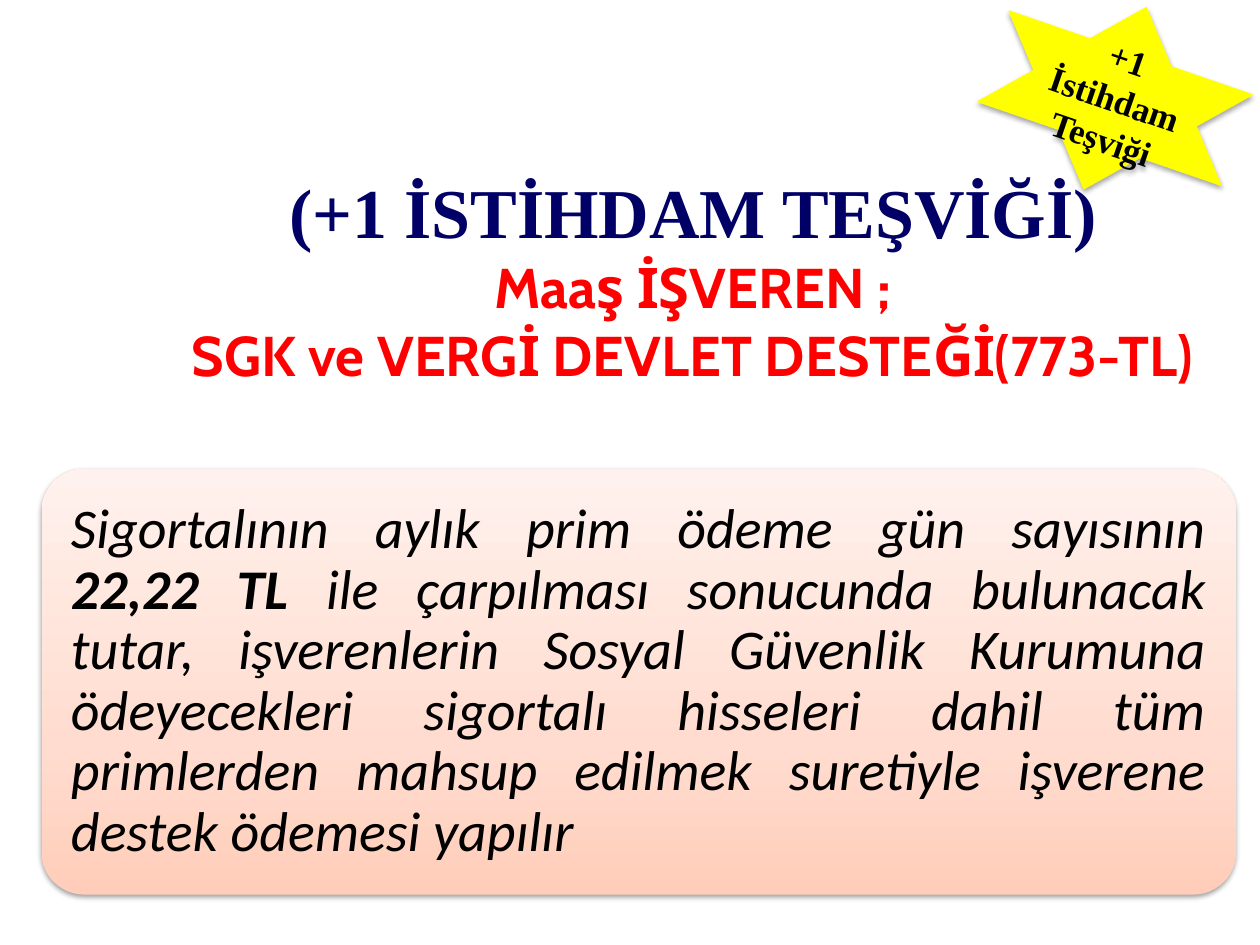
"""Build the slide on the +1 employment incentive."""
from copy import deepcopy
from dataclasses import dataclass

from pptx import Presentation
from pptx.dml.color import RGBColor
from pptx.enum.shapes import MSO_SHAPE
from pptx.enum.text import MSO_ANCHOR, MSO_AUTO_SIZE, PP_ALIGN
from pptx.oxml import parse_xml
from pptx.oxml.ns import nsdecls, qn
from pptx.shapes.autoshape import Shape
from pptx.slide import Slide
from pptx.text.text import TextFrame, _Paragraph as Paragraph
from pptx.util import Pt


@dataclass
class Frame:
    left: float
    top: float
    width: float
    height: float

    def lengths(self) -> list[Pt]:
        return [Pt(value) for value in (self.left, self.top, self.width, self.height)]


@dataclass
class Style:
    name: str
    size: float
    color: str
    bold: bool = False
    italic: bool = False


HEADING = Style("Times New Roman", 40, "000066", bold=True)
SUBHEADING = Style("Cabin", 32, "FF0000", bold=True)
BODY = Style("Calibri", 32, "000000", italic=True)
BODY_BOLD = Style("Calibri", 32, "000000", bold=True, italic=True)
BADGE = Style("Times New Roman", 20, "000000", bold=True)

PANEL_FRAME = Frame(23.76, 267.84, 682.56, 243.36)
BODY_FRAME = Frame(30.96, 275.04, 668.16, 228.96)
TITLE_FRAME = Frame(85.68, 92.88, 620.64, 172.08)
BADGE_FRAME = Frame(563.76, 1.44, 146.88, 109.44)

HEADING_LINES = [
    ("(+1 İSTİHDAM TEŞVİĞİ)", HEADING),
    ("Maaş İŞVEREN ;", SUBHEADING),
    ("SGK ve VERGİ DEVLET DESTEĞİ(773-TL)", SUBHEADING),
]
PANEL_STOPS = [(0, "FFCDBA"), (0.35, "FFDCCF"), (1, "FFF1ED")]


def color(value: str) -> RGBColor:
    """Turn a hex string into a colour."""
    return RGBColor.from_string(value)


def set_values(target: object, values: dict) -> None:
    """Set each named attribute on the target."""
    for name, value in values.items():
        setattr(target, name, value)


def add_span(para: Paragraph, text: str, style: Style) -> None:
    """Append styled text to a paragraph."""
    span = para.add_run()
    span.text = text
    set_values(span.font, {
        "name": style.name, "size": Pt(style.size),
        "bold": style.bold, "italic": style.italic,
    })
    span.font.color.rgb = color(style.color)


def set_frame(text_frame: TextFrame, anchor: MSO_ANCHOR, inset_x: float, inset_y: float) -> None:
    """Set wrapping, anchor and insets of a text frame."""
    set_values(text_frame, {
        "word_wrap": True, "auto_size": MSO_AUTO_SIZE.NONE, "vertical_anchor": anchor,
        "margin_left": Pt(inset_x), "margin_right": Pt(inset_x),
        "margin_top": Pt(inset_y), "margin_bottom": Pt(inset_y),
    })


def place(box: Shape, frame: Frame) -> None:
    """Move a placeholder to its frame."""
    set_values(box, dict(zip(("left", "top", "width", "height"), frame.lengths())))


def add_shadow(box: Shape, blur: float, distance: float, opacity: int) -> None:
    """Give a shape a soft black shadow falling downwards."""
    box.shadow.inherit = False
    effects = box.element.spPr.find(qn("a:effectLst"))
    effects.append(parse_xml(
        f'<a:outerShdw {nsdecls("a")} blurRad="{Pt(blur)}" dist="{Pt(distance)}" '
        f'dir="5400000" rotWithShape="0"><a:srgbClr val="000000">'
        f'<a:alpha val="{opacity * 1000}"/></a:srgbClr></a:outerShdw>'
    ))


def add_panel(slide: Slide) -> Shape:
    """Draw the rounded gradient panel."""
    panel = slide.shapes.add_shape(MSO_SHAPE.ROUNDED_RECTANGLE, *PANEL_FRAME.lengths())
    panel.adjustments[0] = 0.1
    panel.line.fill.background()
    panel.fill.gradient()
    panel.fill.gradient_angle = 90
    first_stop = panel.element.spPr.find(".//" + qn("a:gs"))
    first_stop.addnext(deepcopy(first_stop))
    for stop, (position, value) in zip(panel.fill.gradient_stops, PANEL_STOPS):
        stop.position = position
        stop.color.rgb = color(value)
    add_shadow(panel, 3.1, 1.6, 38)
    return panel


def fill_title(title: Shape) -> None:
    """Write the three heading lines."""
    place(title, TITLE_FRAME)
    set_frame(title.text_frame, MSO_ANCHOR.TOP, 7.2, 3.6)
    for index, (text, style) in enumerate(HEADING_LINES):
        para = title.text_frame.add_paragraph() if index else title.text_frame.paragraphs[0]
        para.alignment = PP_ALIGN.CENTER
        add_span(para, text, style)


def fill_body(body: Shape) -> None:
    """Write the justified explanation."""
    place(body, BODY_FRAME)
    set_frame(body.text_frame, MSO_ANCHOR.MIDDLE, 9.6, 9.6)
    para = body.text_frame.paragraphs[0]
    properties = para._p.get_or_add_pPr()
    properties.set("marL", "0")
    properties.set("indent", "0")
    properties.append(parse_xml(f'<a:buNone {nsdecls("a")}/>'))
    set_values(para, {
        "alignment": PP_ALIGN.JUSTIFY, "line_spacing": 0.9, "space_before": Pt(0),
    })
    add_span(para, "Sigortalının aylık prim ödeme gün sayısının", BODY)
    para.add_line_break()
    add_span(para, "22,22 TL", BODY_BOLD)
    add_span(
        para,
        " ile çarpılması sonucunda bulunacak tutar, işverenlerin Sosyal Güvenlik Kurumuna "
        "ödeyecekleri sigortalı hisseleri dahil tüm primlerden mahsup edilmek suretiyle "
        "işverene destek ödemesi yapılır",
        BODY,
    )


def add_badge(slide: Slide) -> None:
    """Draw the tilted yellow star."""
    badge = slide.shapes.add_shape(MSO_SHAPE.STAR_6_POINT, *BADGE_FRAME.lengths())
    badge.rotation = 19
    badge.fill.solid()
    badge.fill.fore_color.rgb = color("FFFF00")
    badge.line.color.rgb = color("FFFF00")
    badge.line.width = Pt(0.75)
    add_shadow(badge, 3.1, 1.8, 35)
    set_frame(badge.text_frame, MSO_ANCHOR.MIDDLE, 7.2, 3.6)
    para = badge.text_frame.paragraphs[0]
    para.alignment = PP_ALIGN.CENTER
    add_span(para, "+1 İstihdam Teşviği", BADGE)


def main() -> None:
    """Build and save the deck."""
    deck = Presentation()
    deck.slide_width, deck.slide_height = Pt(720), Pt(540)
    slide = deck.slides.add_slide(deck.slide_layouts[1])
    title, body = slide.placeholders
    panel = add_panel(slide)
    title.element.addprevious(panel.element)
    fill_title(title)
    fill_body(body)
    add_badge(slide)
    deck.save("out.pptx")


if __name__ == "__main__":
    main()
